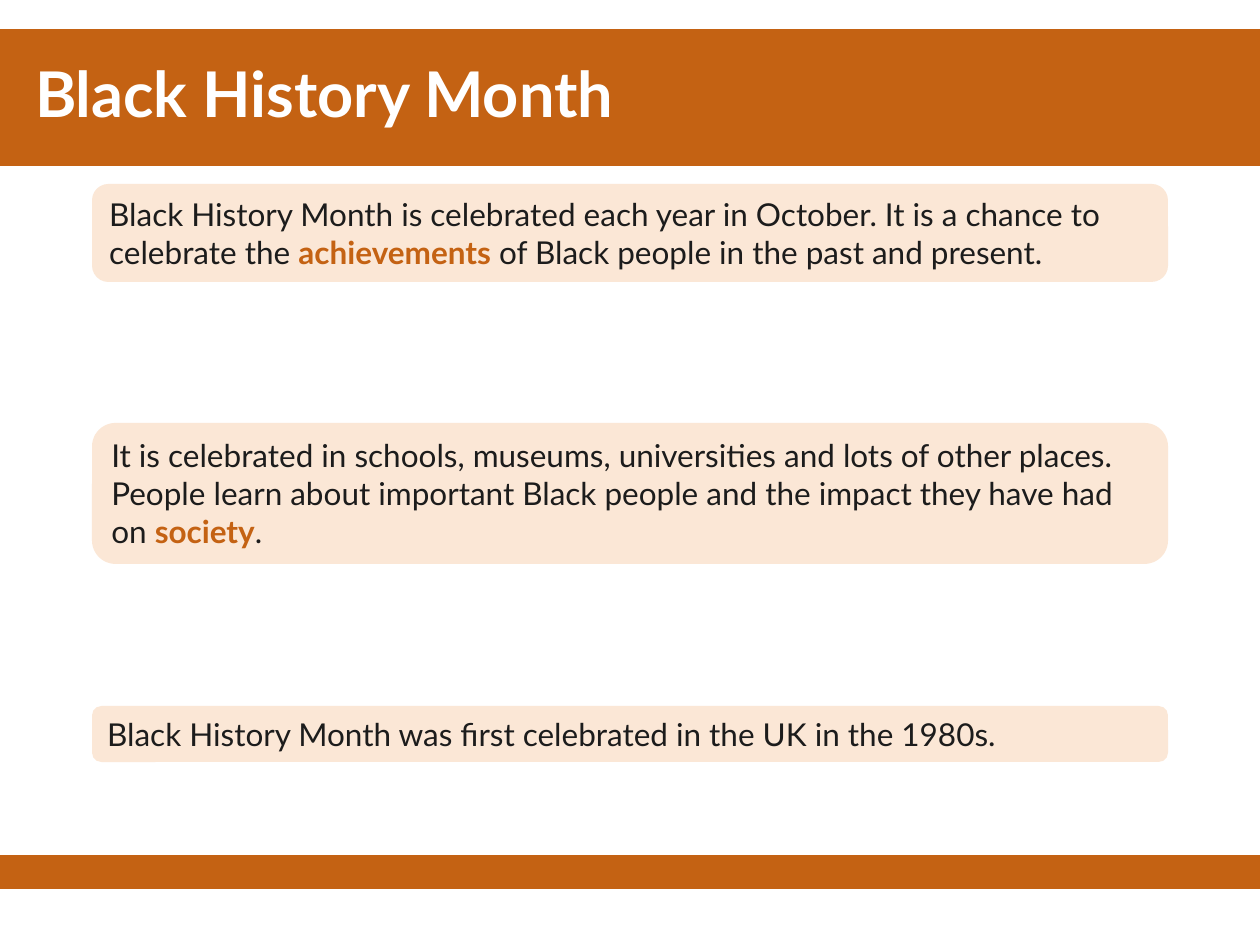
from pptx import Presentation
from pptx import util as u
from pptx.dml import color
from pptx.enum import shapes, text

PX = u.Inches(1) / 126
ORANGE, PEACH, INK, WHITE = "C46213", "FBE7D6", "1C1C1C", "FFFFFF"
W, H = 1260, 945


def px(n):
    return u.Emu(round(n * PX))


def rgb(value):
    return color.RGBColor.from_string(value)


def fill(sp, value):
    sp.fill.solid()
    sp.fill.fore_color.rgb = rgb(value)
    sp.line.fill.background()


def apply(target, values):
    for name, value in values.items():
        setattr(target, name, value)


def add_run(p, words, size, ink, bold=False):
    r = p.add_run()
    r.text = words
    apply(r.font, {"name": "Lato", "size": u.Pt(size), "bold": bold})
    r.font.color.rgb = rgb(ink)


def add_block(s, kind, box, value):
    sp = s.shapes.add_shape(kind, *map(px, box))
    sp.shadow.inherit = False
    fill(sp, value)
    return sp


def add_title(s, box, words):
    sp = s.shapes.title
    apply(sp, dict(zip(("left", "top", "width", "height"), map(px, box))))
    fill(sp, ORANGE)
    tf = sp.text_frame
    sides = ("left", "top", "right", "bottom")
    apply(tf, {f"margin_{side}": px(35) for side in sides})
    apply(tf, {"word_wrap": True, "auto_size": text.MSO_AUTO_SIZE.NONE,
               "vertical_anchor": text.MSO_ANCHOR.MIDDLE})
    p = tf.paragraphs[0]
    apply(p, {"alignment": text.PP_ALIGN.LEFT, "line_spacing": 0.9})
    add_run(p, words, 36, WHITE, True)


def add_card(s, box, before, keyword="", after=""):
    sp = add_block(s, shapes.MSO_SHAPE.ROUNDED_RECTANGLE, box, PEACH)
    tf = sp.text_frame
    apply(tf, {"word_wrap": True, "vertical_anchor": text.MSO_ANCHOR.TOP,
               "auto_size": text.MSO_AUTO_SIZE.SHAPE_TO_FIT_TEXT})
    p = tf.paragraphs[0]
    p.alignment = text.PP_ALIGN.LEFT
    add_run(p, before, 18, INK)
    if keyword:
        add_run(p, keyword, 18, ORANGE, True)
        add_run(p, after, 18, INK)


CARDS = [
    (184, 98, "Black History Month is celebrated each year in October. "
     "It is a chance to celebrate the ", "achievements",
     " of Black people in the past and present."),
    (423, 141, "It is celebrated in schools, museums, universities and lots "
     "of other places. People learn about important Black people and the "
     "impact they have had on ", "society", "."),
    (706, 56, "Black History Month was first celebrated in the UK in the 1980s."),
]


def main():
    prs = Presentation()
    apply(prs, {"slide_width": px(W), "slide_height": px(H)})
    s = prs.slides.add_slide(prs.slide_layouts[5])
    add_title(s, (0, 29, W, 137), "Black History Month")
    for top, height, *words in CARDS:
        add_card(s, (92, top, W - 2 * 92, height), *words)
    add_block(s, shapes.MSO_SHAPE.RECTANGLE, (0, 855, W, 34), ORANGE)
    prs.save("out.pptx")


if __name__ == "__main__":
    main()
